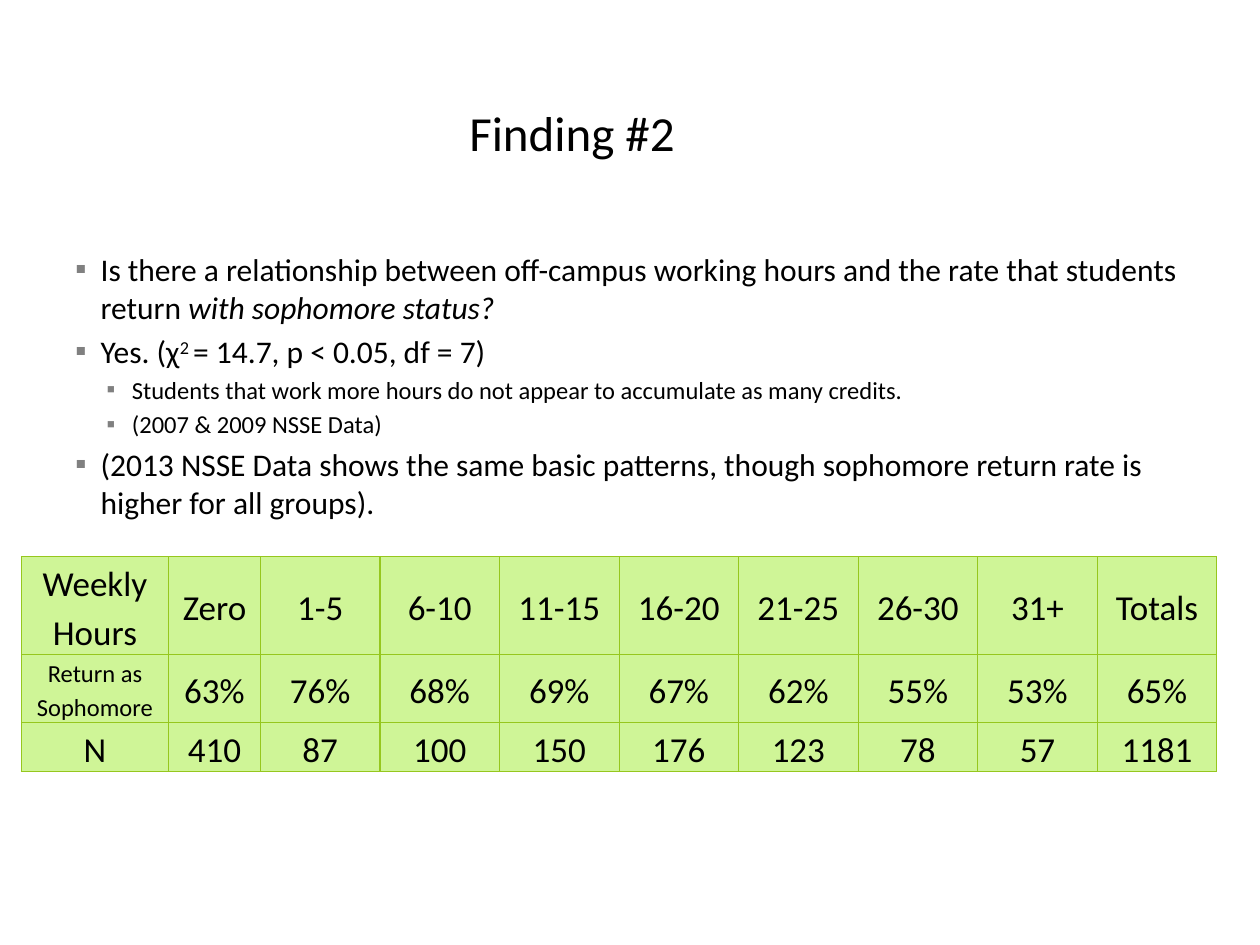
from dataclasses import dataclass

from lxml import etree
from pptx import Presentation
from pptx import util as u
from pptx.dml.color import RGBColor
from pptx.enum import text
from pptx.oxml import ns

FACE = "Calibri"
INK = "000000"
GREY = "808080"
LIME = "CFF597"
EDGE = "96C71E"


@dataclass
class Run:
    words: str
    slant: bool = False
    raised: bool = False


@dataclass
class Point:
    runs: list[Run]
    size: int = 18
    left: float = 0.51


POINTS = [
    Point([
        Run("Is there a relationship between off-campus working hours "
            "and the rate that students return "),
        Run("with sophomore status?", slant=True),
    ]),
    Point([Run("Yes. (χ"), Run("2 ", raised=True), Run("= 14.7, p < 0.05, df = 7)")]),
    Point([Run("Students that work more hours do not appear to accumulate "
               "as many credits.")], 14, 1.14),
    Point([Run("(2007 & 2009 NSSE Data)")], 14, 1.14),
    Point([Run("(2013 NSSE Data shows the same basic patterns, though sophomore "
               "return rate is higher for all groups).")]),
]

ROWS = [
    ["Weekly Hours", "Zero", "1-5", "6-10", "11-15", "16-20", "21-25", "26-30",
     "31+", "Totals"],
    ["Return as Sophomore", "63%", "76%", "68%", "69%", "67%", "62%", "55%",
     "53%", "65%"],
    ["N", "410", "87", "100", "150", "176", "123", "78", "57", "1181"],
]
WIDTHS = [2.97, 1.85] + [2.41] * 8
HEIGHTS = [1.98, 1.37, 0.99]


def tint(code: str) -> RGBColor:
    return RGBColor.from_string(code)


def style(para, size: int) -> None:
    para.font.name = FACE
    para.font.size = u.Pt(size)
    para.font.color.rgb = tint(INK)


def node(host, tag: str, **attrs: str):
    return etree.SubElement(host, ns.qn(tag), attrs)


def bullet(para, left: float) -> None:
    props = para._p.get_or_add_pPr()
    props.set("marL", str(u.Cm(left)))
    props.set("indent", str(-u.Cm(0.51)))
    node(node(props, "a:buClr"), "a:srgbClr", val=GREY)
    node(props, "a:buFont", typeface=FACE)
    node(props, "a:buChar", char="▪")


def draw_title(slide) -> None:
    title = slide.shapes.title
    title.left, title.top = u.Cm(7.62), u.Cm(1.07)
    title.width, title.height = u.Cm(7.82), u.Cm(3.18)
    frame = title.text_frame
    frame.text = "Finding #2"
    frame.vertical_anchor = text.MSO_ANCHOR.MIDDLE
    para = frame.paragraphs[0]
    para.alignment = text.PP_ALIGN.CENTER
    style(para, 28)


def draw_points(slide, points: list[Point]) -> None:
    box = slide.shapes.add_textbox(u.Cm(1.27), u.Cm(4.11), u.Cm(22.86), u.Cm(7.32))
    frame = box.text_frame
    frame.word_wrap = True
    frame.vertical_anchor = text.MSO_ANCHOR.MIDDLE
    for i, point in enumerate(points):
        para = frame.add_paragraph() if i else frame.paragraphs[0]
        bullet(para, point.left)
        if i:
            para.space_before = u.Pt(point.size * 0.2)
        style(para, point.size)
        for part in point.runs:
            run = para.add_run()
            run.text = part.words
            if part.slant:
                run.font.italic = True
            if part.raised:
                run._r.get_or_add_rPr().set("baseline", "30000")


def draw_cell(cell, words: str, size: int) -> None:
    props = cell._tc.get_or_add_tcPr()
    for side in "LRTB":
        line = node(props, f"a:ln{side}", w=str(u.Pt(0.75)))
        node(node(line, "a:solidFill"), "a:srgbClr", val=EDGE)
    cell.fill.solid()
    cell.fill.fore_color.rgb = tint(LIME)
    cell.margin_left = cell.margin_right = u.Cm(0.18)
    cell.margin_top = cell.margin_bottom = 0
    cell.vertical_anchor = text.MSO_ANCHOR.MIDDLE
    cell.text = words
    para = cell.text_frame.paragraphs[0]
    para.alignment = text.PP_ALIGN.CENTER
    para.line_spacing = 1.15
    style(para, size)


def draw_table(slide, rows: list[list[str]]) -> None:
    table = slide.shapes.add_table(
        len(rows), len(WIDTHS), u.Cm(0.43), u.Cm(11.22),
        u.Cm(sum(WIDTHS)), u.Cm(sum(HEIGHTS))).table
    for col, width in zip(table.columns, WIDTHS):
        col.width = u.Cm(width)
    for row, height in zip(table.rows, HEIGHTS):
        row.height = u.Cm(height)
    for r, row in enumerate(rows):
        for c, words in enumerate(row):
            draw_cell(table.cell(r, c), words, 14 if (r, c) == (1, 0) else 20)


def main() -> None:
    deck = Presentation()
    deck.slide_width, deck.slide_height = u.Cm(25.4), u.Cm(19.05)
    slide = deck.slides.add_slide(deck.slide_layouts[5])
    draw_points(slide, POINTS)
    draw_title(slide)
    draw_table(slide, ROWS)
    deck.save("out.pptx")


if __name__ == "__main__":
    main()
